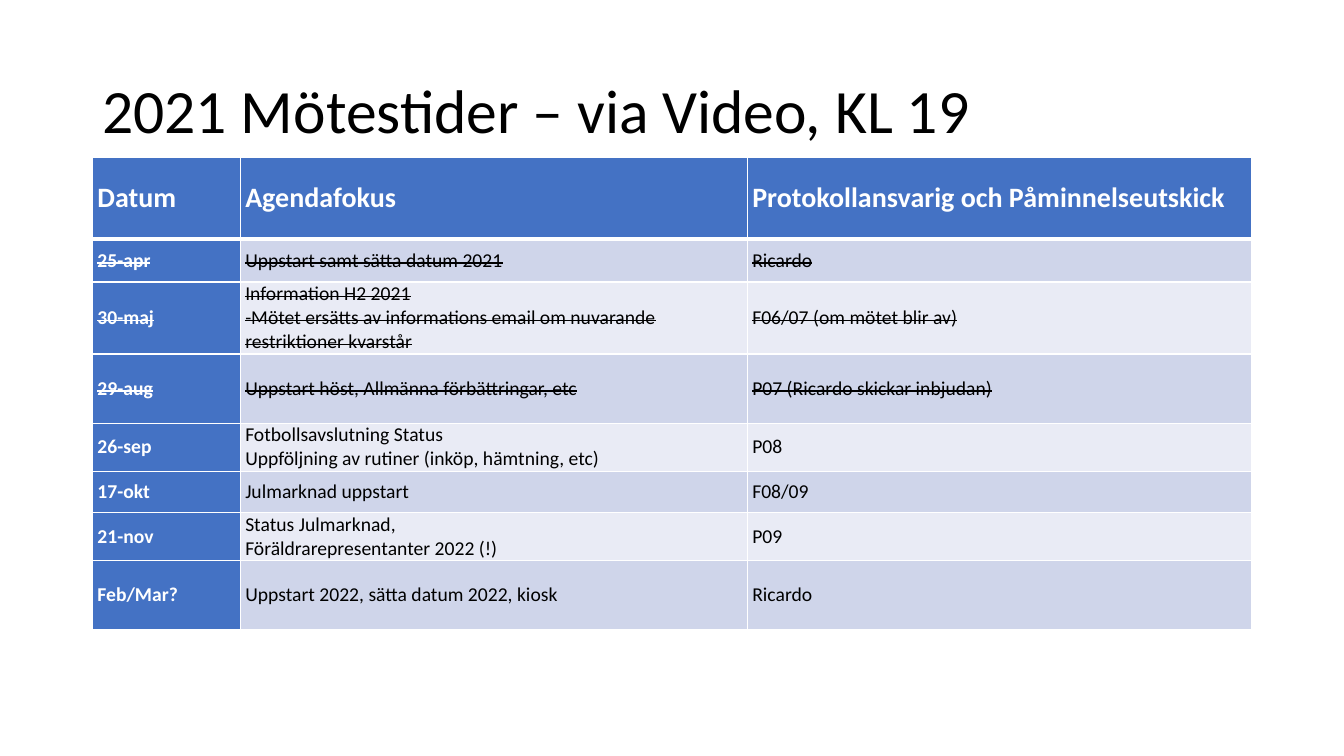
from lxml.etree import SubElement
from pptx import Presentation
from pptx.dml.color import RGBColor
from pptx.enum.text import MSO_ANCHOR
from pptx.oxml.ns import qn
from pptx.util import Pt

COLORS = {
    "text": "000000",
    "light": "FFFFFF",
    "accent": "4472C4",
    "odd": "CFD5EA",
    "even": "E9EBF5",
}
FONT = "Calibri"
HEADINGS = ("Datum", "Agendafokus", "Protokollansvarig och Påminnelseutskick")
MEETINGS = [
    ("25-apr", "Uppstart samt sätta datum 2021", "Ricardo"),
    (
        "30-maj",
        "Information H2 2021\n-Mötet ersätts av informations email om nuvarande restriktioner kvarstår",
        "F06/07 (om mötet blir av)",
    ),
    ("29-aug", "Uppstart höst, Allmänna förbättringar, etc", "P07 (Ricardo skickar inbjudan)"),
    ("26-sep", "Fotbollsavslutning Status\nUppföljning av rutiner (inköp, hämtning, etc)", "P08"),
    ("17-okt", "Julmarknad uppstart", "F08/09"),
    ("21-nov", "Status Julmarknad,\nFöräldrarepresentanter 2022 (!)", "P09"),
    ("Feb/Mar?", "Uppstart 2022, sätta datum 2022, kiosk", "Ricardo"),
]
CANCELLED_ROWS = (1, 2, 3)
COLUMN_WIDTHS = (105.6, 362.2, 360)
ROW_HEIGHTS = (58.1, 30.8, 51.5, 49.4, 34.3, 29.5, 34.3, 49.4)


def style_paragraph(para, size, color, bold=False):
    para.font.name = FONT
    para.font.size = Pt(size)
    para.font.bold = bold
    para.font.color.rgb = RGBColor.from_string(COLORS[color])


def set_borders(cell, top, bottom):
    properties = cell._tc.get_or_add_tcPr()
    for side, width in (("L", 1), ("R", 1), ("T", top), ("B", bottom)):
        line = SubElement(properties, qn(f"a:ln{side}"), w=str(Pt(width)))
        fill = SubElement(line, qn("a:solidFill"))
        SubElement(fill, qn("a:srgbClr"), val=COLORS["light"])


def fill_cell(cell, text, row, column):
    is_label = row == 0 or column == 0
    set_borders(cell, 3 if row == 1 else 1, 3 if row == 0 else 1)
    band = "accent" if is_label else "odd" if row % 2 else "even"
    cell.fill.solid()
    cell.fill.fore_color.rgb = RGBColor.from_string(COLORS[band])
    cell.vertical_anchor = MSO_ANCHOR.MIDDLE
    cell.margin_left = cell.margin_right = Pt(3.6)
    cell.margin_top = cell.margin_bottom = 0
    cell.text_frame.text = text
    for para in cell.text_frame.paragraphs:
        style_paragraph(para, 20 if row == 0 else 14, "light" if is_label else "text", is_label)
        if row in CANCELLED_ROWS:
            for span in para.runs:
                span._r.get_or_add_rPr().set("strike", "sngStrike")


def add_title(page, left, top, width, height):
    box = page.shapes.add_textbox(Pt(left), Pt(top), Pt(width), Pt(height))
    frame = box.text_frame
    frame.word_wrap = True
    frame.vertical_anchor = MSO_ANCHOR.MIDDLE
    frame.text = "2021 Mötestider – via Video, KL 19"
    para = frame.paragraphs[0]
    para.line_spacing = 0.9
    style_paragraph(para, 44, "text")


def add_schedule(page, left, top, width, height):
    rows = [HEADINGS, *MEETINGS]
    table = page.shapes.add_table(
        len(rows), len(HEADINGS), Pt(left), Pt(top), Pt(width), Pt(height)
    ).table
    table.first_col = True
    for column, column_width in zip(table.columns, COLUMN_WIDTHS):
        column.width = Pt(column_width)
    for row, row_height in zip(table.rows, ROW_HEIGHTS):
        row.height = Pt(row_height)
    for row, texts in enumerate(rows):
        for column, text in enumerate(texts):
            fill_cell(table.cell(row, column), text, row, column)


def main():
    deck = Presentation()
    deck.slide_width, deck.slide_height = Pt(960), Pt(540)
    page = deck.slides.add_slide(deck.slide_layouts[6])
    add_title(page, 66, 28.8, 828, 104.4)
    add_schedule(page, 66, 112.5, sum(COLUMN_WIDTHS), sum(ROW_HEIGHTS))
    deck.save("out.pptx")


if __name__ == "__main__":
    main()
